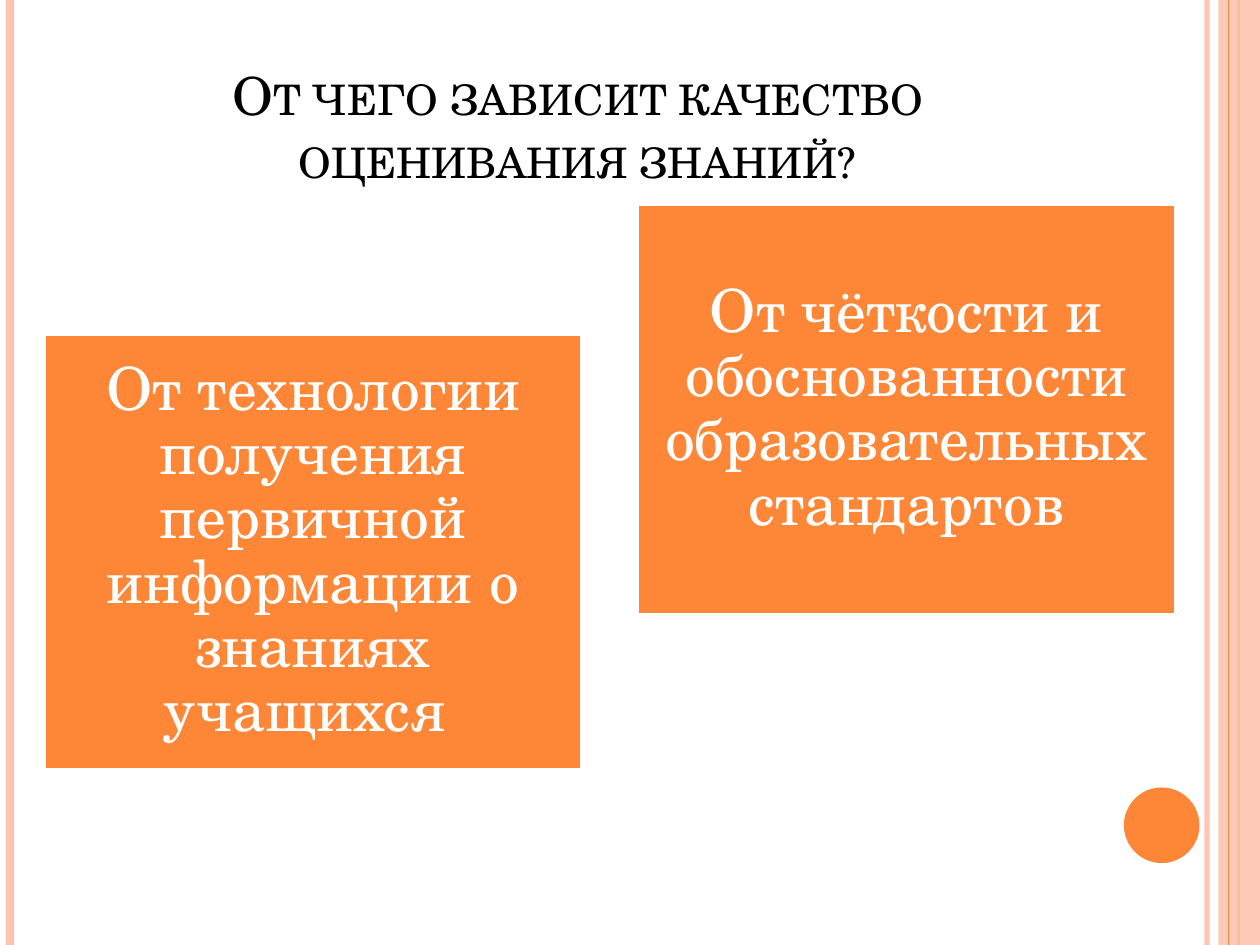
import pptx
import pptx.dml.color
import pptx.enum.shapes
import pptx.enum.text
import pptx.oxml.ns
import pptx.oxml.xmlchemy
import pptx.util

COLORS = {"accent": "FE8637", "pale": "FEC3AE", "white": "FFFFFF", "black": "000000"}
FONT = "TeX Gyre Schola"
WIDTH, HEIGHT = 10, 7.5
SHAPES = pptx.enum.shapes.MSO_SHAPE
ANCHORS = pptx.enum.text.MSO_ANCHOR


class SlideBuilder:
    def __init__(self, presentation):
        self.presentation = presentation
        self.slide = presentation.slides.add_slide(presentation.slide_layouts[5])

    def color(self, name):
        return pptx.dml.color.RGBColor.from_string(COLORS[name])

    def place(self, left, top, width, height):
        slide_width = self.presentation.slide_width
        slide_height = self.presentation.slide_height
        return (round(left * slide_width), round(top * slide_height),
                round(width * slide_width), round(height * slide_height))

    def apply(self, target, values):
        for name, value in values.items():
            setattr(target, name, value)

    def set_alpha(self, format_element, percent):
        color_element = format_element.find(".//" + pptx.oxml.ns.qn("a:srgbClr"))
        alpha = pptx.oxml.xmlchemy.OxmlElement("a:alpha")
        alpha.set("val", str(percent * 1000))
        color_element.append(alpha)

    def rule(self, share, color, weight, alpha=None):
        x, top, _, bottom = self.place(share, 0, 0, 1)
        line = self.slide.shapes.add_connector(
            pptx.enum.shapes.MSO_CONNECTOR.STRAIGHT, x, top, x, bottom)
        line.line.color.rgb = self.color(color)
        line.line.width = pptx.util.Pt(weight)
        properties = line._element.spPr
        if alpha:
            self.set_alpha(properties, alpha)
        properties.append(pptx.oxml.xmlchemy.OxmlElement("a:effectLst"))

    def shape(self, kind, area, color, alpha=None):
        shape = self.slide.shapes.add_shape(kind, *self.place(*area))
        shape.shadow.inherit = False
        shape.fill.solid()
        shape.fill.fore_color.rgb = self.color(color)
        shape.line.fill.background()
        if alpha:
            self.set_alpha(shape._element.spPr, alpha)
        return shape

    def add_text(self, shape, text, size, color, frame_values, line_spacing=1.0):
        frame = shape.text_frame
        self.apply(frame, {"word_wrap": True,
                           "auto_size": pptx.enum.text.MSO_AUTO_SIZE.NONE, **frame_values})
        paragraph = frame.paragraphs[0]
        self.apply(paragraph, {"alignment": pptx.enum.text.PP_ALIGN.CENTER,
                               "line_spacing": line_spacing})
        run = paragraph.add_run()
        run.text = text
        self.apply(run.font, {"name": FONT, "size": pptx.util.Pt(size)})
        run.font.color.rgb = self.color(color)
        return run

    def title(self, text, area):
        title = self.slide.shapes.title
        self.apply(title, dict(zip(("left", "top", "width", "height"), self.place(*area))))
        run = self.add_text(title, text, 30, "black", {"vertical_anchor": ANCHORS.BOTTOM})
        run.font._element.set("cap", "small")

    def card(self, text, area):
        card = self.shape(SHAPES.RECTANGLE, area, "accent")
        card.line.color.rgb = self.color("white")
        card.line.width = pptx.util.Pt(2)
        margins = {f"margin_{side}": pptx.util.Inches(0.14)
                   for side in ("left", "top", "right", "bottom")}
        self.add_text(card, text, 34, "white",
                      {"vertical_anchor": ANCHORS.MIDDLE, **margins}, 0.9)


def main():
    presentation = pptx.Presentation()
    presentation.slide_width = pptx.util.Inches(WIDTH)
    presentation.slide_height = pptx.util.Inches(HEIGHT)
    builder = SlideBuilder(presentation)

    builder.rule(9.58 / WIDTH, "pale", 3, 93)
    builder.rule(0.08 / WIDTH, "pale", 4.5)
    builder.rule(9.83 / WIDTH, "accent", 1.5)
    builder.shape(SHAPES.RECTANGLE, (9.67 / WIDTH, 0, 0.33 / WIDTH, 1), "pale", 87)
    builder.rule(9.75 / WIDTH, "accent", 0.75)
    builder.shape(SHAPES.OVAL, (8.92 / WIDTH, 6.25 / HEIGHT, 0.6 / WIDTH, 0.6 / HEIGHT), "accent")

    builder.title("От чего зависит качество оценивания знаний?",
                  (0.5 / WIDTH, 0.3 / HEIGHT, 8.17 / WIDTH, 1.25 / HEIGHT))
    cards = (
        ("От технологии получения первичной информации о знаниях учащихся ", 0.35, 2.65, 3.46),
        ("От чёткости и обоснованности образовательных стандартов", 5.06, 1.62, 3.26),
    )
    for text, left, top, height in cards:
        builder.card(text, (left / WIDTH, top / HEIGHT, 4.27 / WIDTH, height / HEIGHT))

    presentation.save("out.pptx")


if __name__ == "__main__":
    main()
